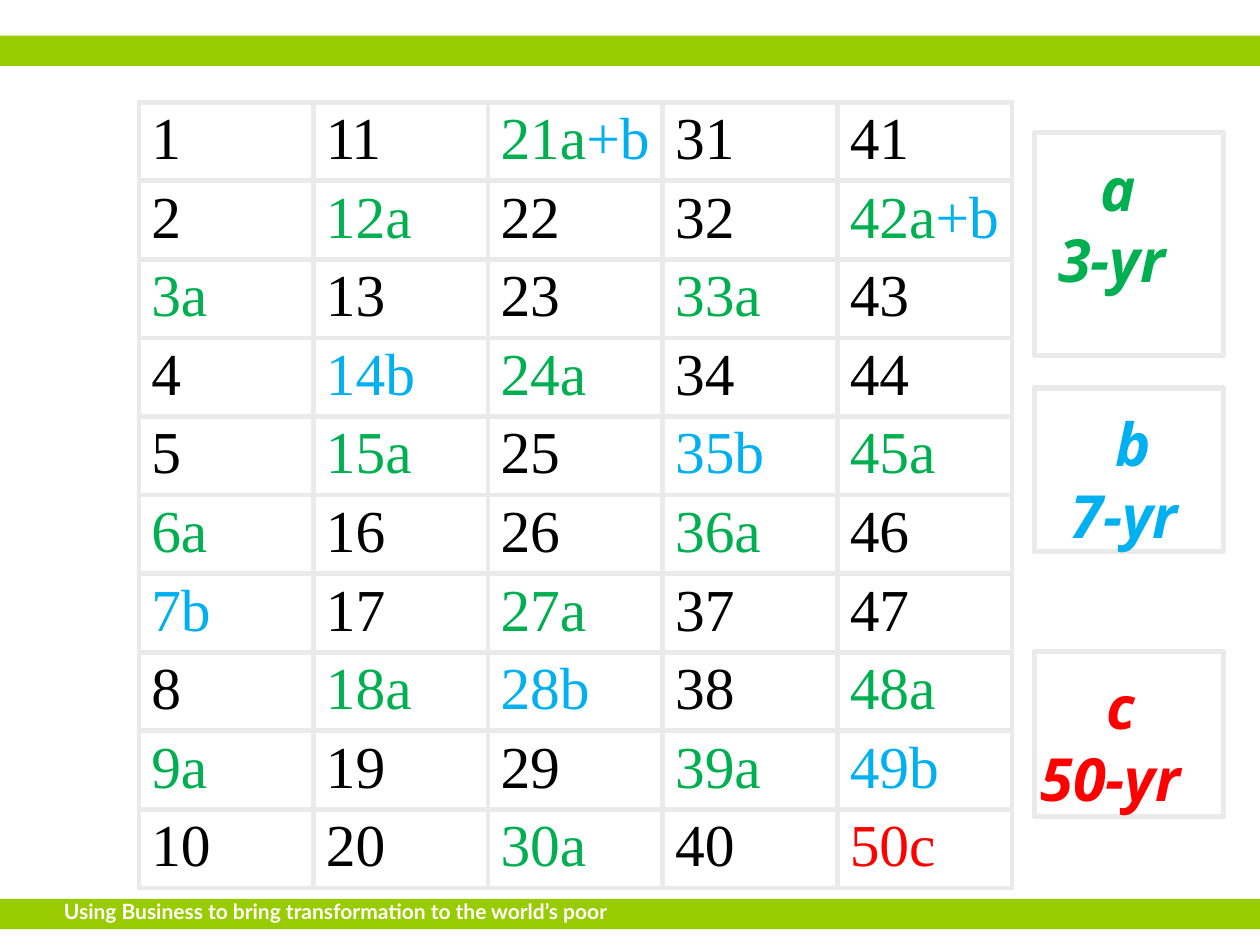
from lxml import etree
from pptx import Presentation
from pptx.dml.color import RGBColor
from pptx.enum.shapes import MSO_SHAPE
from pptx.enum.text import MSO_ANCHOR, PP_ALIGN
from pptx.oxml.ns import qn
from pptx.util import Cm, Pt

RECTANGLE = MSO_SHAPE.RECTANGLE
TOP = MSO_ANCHOR.TOP
LEFT = PP_ALIGN.LEFT

COLORS = {
    "bar": "99CC00",
    "rule": "EAEAEA",
    "white": "FFFFFF",
    "plain": "000000",
    "a": "00B050",
    "b": "00B0F0",
    "c": "FF0000",
}
ROWS, COLUMNS = 10, 5
RULE_WIDTH = Pt(3)


def rgb(name):
    return RGBColor.from_string(COLORS[name])


def add_span(para, text, color="plain", size=34, name="Times New Roman",
             bold=False, italic=False, spacing=0):
    """Append formatted text; spacing is in hundredths of a point."""
    span = para.add_run()
    span.text = text
    font = span.font
    font.name, font.size = name, Pt(size)
    font.bold, font.italic = bold, italic
    font.color.rgb = rgb(color)
    if spacing:
        span._r.get_or_add_rPr().set("spc", str(spacing))


def set_margins(target, left=0, top=0, right=0, bottom=0):
    target.margin_left, target.margin_right = Cm(left), Cm(right)
    target.margin_top, target.margin_bottom = Cm(top), Cm(bottom)


def add_rectangle(page, left, top, width, height, fill=None, line=None):
    box = page.shapes.add_shape(RECTANGLE, Cm(left), Cm(top), Cm(width), Cm(height))
    box.shadow.inherit = False
    if fill:
        box.fill.solid()
        box.fill.fore_color.rgb = rgb(fill)
    else:
        box.fill.background()
    if line:
        box.line.color.rgb = rgb(line)
        box.line.width = RULE_WIDTH
    else:
        box.line.fill.background()
    return box


def add_footer(page, text):
    box = page.shapes.add_textbox(Cm(1.09), Cm(18.01), Cm(11.94), Cm(0.71))
    frame = box.text_frame
    frame.word_wrap = False
    set_margins(frame, 0.2, 0.1, 0.2, 0.1)
    add_span(frame.paragraphs[0], text, color="white", size=12, name="Lato", bold=True)


def add_cell_borders(cell):
    properties = cell._tc.get_or_add_tcPr()
    for position, side in enumerate(("lnL", "lnR", "lnT", "lnB")):
        line = etree.Element(qn(f"a:{side}"), w=str(RULE_WIDTH))
        fill = etree.SubElement(line, qn("a:solidFill"))
        etree.SubElement(fill, qn("a:srgbClr"), val=COLORS["rule"])
        properties.insert(position, line)


def year_spans(year):
    """Return (text, color) pairs: a every 3rd year, b every 7th, c at 50."""
    if year == 50:
        return [(f"{year}c", "c")]
    if year % 21 == 0:
        return [(f"{year}a", "a"), ("+b", "b")]
    if year % 3 == 0:
        return [(f"{year}a", "a")]
    if year % 7 == 0:
        return [(f"{year}b", "b")]
    return [(str(year), "plain")]


def add_year_table(page):
    width, height = Cm(17.6), Cm(15.84)
    table = page.shapes.add_table(
        ROWS, COLUMNS, Cm(2.8), Cm(2.06), width, height).table
    table.first_row = table.horz_banding = False
    for column in table.columns:
        column.width = width // COLUMNS
    for row_number, row in enumerate(table.rows):
        row.height = height // ROWS
        for column_number, cell in enumerate(row.cells):
            year = column_number * ROWS + row_number + 1
            set_margins(cell, left=0.25, top=0.09)
            cell.vertical_anchor = TOP
            cell.fill.background()
            add_cell_borders(cell)
            for text, color in year_spans(year):
                add_span(cell.text_frame.paragraphs[0], text, color=color,
                         spacing=-120 if year == 11 else 0)


def add_cycle_box(page, top, height, letter, length, margin, indent):
    """Add a framed label with the cycle letter above its length."""
    box = add_rectangle(page, 20.85, top, 3.81, height, line="rule")
    frame = box.text_frame
    frame.word_wrap = True
    frame.vertical_anchor = TOP
    set_margins(frame, top=0.38)
    para = frame.paragraphs[0]
    para.alignment = LEFT
    para.line_spacing = Pt(41)
    properties = para._p.get_or_add_pPr()
    properties.set("marL", str(Cm(margin)))
    properties.set("indent", str(Cm(indent)))
    style = {"color": letter, "name": "Open Sans", "bold": True,
             "italic": True, "spacing": -10}
    add_span(para, letter, **style)
    para.add_line_break()
    add_span(para, length, **style)


def main():
    deck = Presentation()
    deck.slide_width, deck.slide_height = Cm(25.4), Cm(19.05)
    page = deck.slides.add_slide(deck.slide_layouts[6])
    for top in (18.12, 0.72):
        add_rectangle(page, 0, top, 25.4, 0.61, fill="bar")
    add_footer(page, "Using Business to bring transformation to the world’s poor")
    add_year_table(page)
    for top, height, letter, length, margin, indent in (
        (2.67, 4.5, "a", "3-yr", 0.48, 0.86),
        (7.82, 3.3, "b", "7-yr", 0.74, 0.89),
        (13.13, 3.33, "c", "50-yr", 0.13, 1.32),
    ):
        add_cycle_box(page, top, height, letter, length, margin, indent)
    deck.save("out.pptx")


if __name__ == "__main__":
    main()
